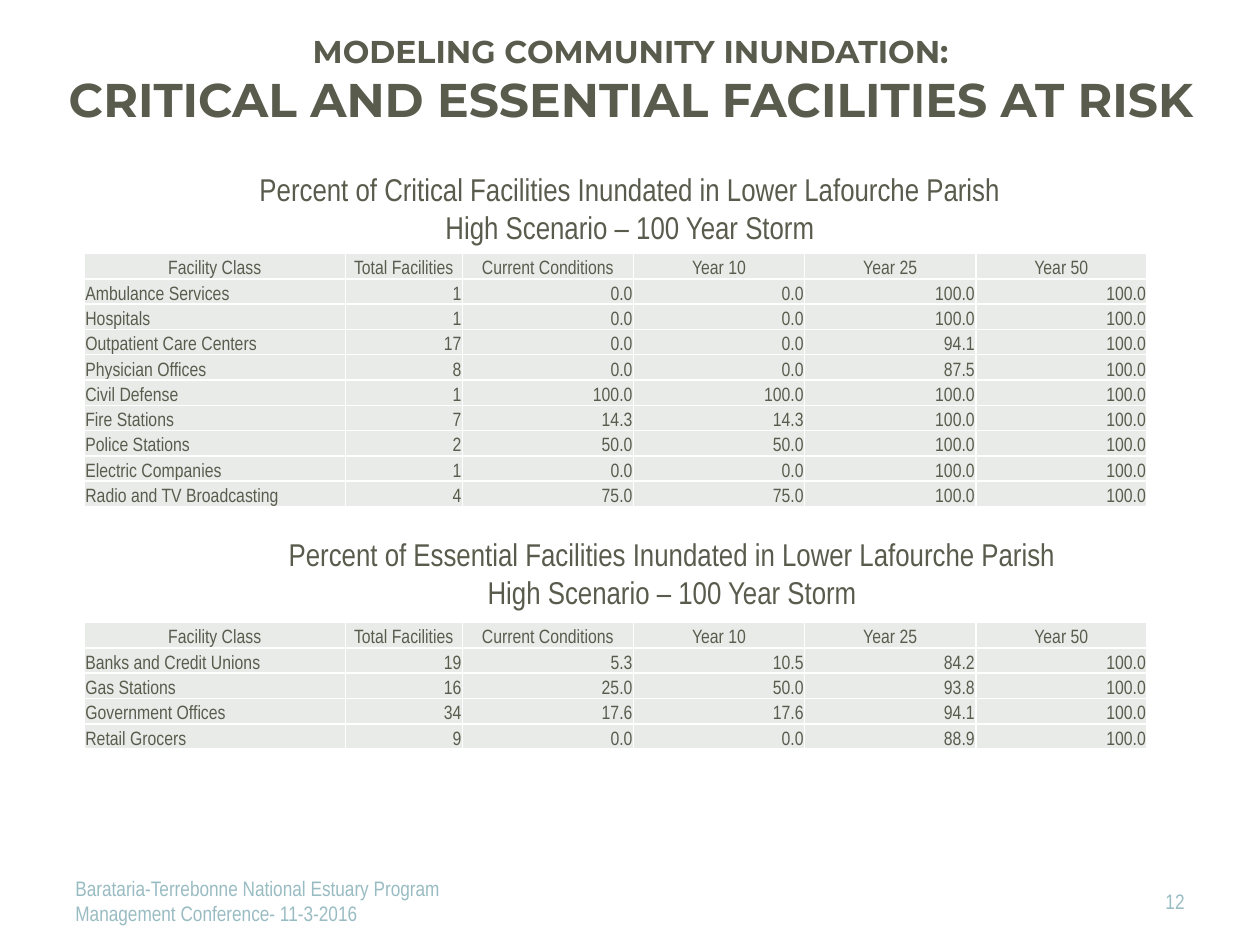
from lxml.etree import SubElement
from pptx import Presentation
from pptx.dml.color import RGBColor
from pptx.enum.text import MSO_ANCHOR as Anchor, PP_ALIGN as Align
from pptx.oxml.ns import qn
from pptx.util import Cm, Pt

COLORS = {"text": "595C4D", "footer": "99BCC3", "cell": "E9EBE9", "border": "FFFFFF"}
BODY_FONT, TITLE_FONT = "Arial Narrow", "Montserrat"
COLUMN_WIDTHS = [5.26, 2.36] + [3.45] * 4
ROW_HEIGHT = 0.51
HEADINGS = ("Facility Class", "Total Facilities", "Current Conditions",
            "Year 10", "Year 25", "Year 50")
CRITICAL = [
    ("Ambulance Services", 1, 0.0, 0.0, 100.0, 100.0),
    ("Hospitals", 1, 0.0, 0.0, 100.0, 100.0),
    ("Outpatient Care Centers", 17, 0.0, 0.0, 94.1, 100.0),
    ("Physician Offices", 8, 0.0, 0.0, 87.5, 100.0),
    ("Civil Defense", 1, 100.0, 100.0, 100.0, 100.0),
    ("Fire Stations", 7, 14.3, 14.3, 100.0, 100.0),
    ("Police Stations", 2, 50.0, 50.0, 100.0, 100.0),
    ("Electric Companies", 1, 0.0, 0.0, 100.0, 100.0),
    ("Radio and TV Broadcasting", 4, 75.0, 75.0, 100.0, 100.0),
]
ESSENTIAL = [
    ("Banks and Credit Unions", 19, 5.3, 10.5, 84.2, 100.0),
    ("Gas Stations", 16, 25.0, 50.0, 93.8, 100.0),
    ("Government Offices", 34, 17.6, 17.6, 94.1, 100.0),
    ("Retail Grocers", 9, 0.0, 0.0, 88.9, 100.0),
]


def add_run(paragraph, text, size, color="text", font=BODY_FONT, bold=False):
    """Append one styled run to a paragraph."""
    run = paragraph.add_run()
    run.text = text
    run.font.name, run.font.size, run.font.bold = font, Pt(size), bold
    run.font.color.rgb = RGBColor.from_string(COLORS[color])


def add_frame(slide, box, anchor=Anchor.MIDDLE):
    """Add a wrapping text box and return its text frame."""
    frame = slide.shapes.add_textbox(*map(Cm, box)).text_frame
    frame.word_wrap = True
    frame.vertical_anchor = anchor
    return frame


def add_title(slide, box):
    """Place the two-line slide title."""
    heading = add_frame(slide, box).paragraphs[0]
    heading.alignment = Align.CENTER
    add_run(heading, "MODELING COMMUNITY INUNDATION:", 18, font=TITLE_FONT, bold=True)
    heading.add_line_break()
    add_run(heading, "CRITICAL AND ESSENTIAL FACILITIES AT RISK", 27,
            font=TITLE_FONT, bold=True)


def add_caption(slide, box, facility_type):
    """Place the two-line caption above a table."""
    frame = add_frame(slide, box, Anchor.TOP)
    topic = frame.paragraphs[0]
    scenario = frame.add_paragraph()
    topic.alignment = scenario.alignment = Align.CENTER
    add_run(topic, f"Percent of {facility_type} Facilities Inundated in "
                   "Lower Lafourche Parish", 18)
    add_run(scenario, "High Scenario – 100 Year Storm", 18)


def fill_cell(cell, text, alignment):
    """Write, border and fill one table cell."""
    cell.margin_left = cell.margin_right = cell.margin_top = Cm(0.02)
    cell.margin_bottom = 0
    cell.vertical_anchor = Anchor.BOTTOM
    paragraph = cell.text_frame.paragraphs[0]
    paragraph.alignment = alignment
    add_run(paragraph, text, 11)
    properties = cell._tc.get_or_add_tcPr()
    for side in ("lnL", "lnR", "lnT", "lnB"):
        border = SubElement(properties, qn(f"a:{side}"), w=str(Pt(1)))
        paint = SubElement(border, qn("a:solidFill"))
        SubElement(paint, qn("a:srgbClr"), val=COLORS["border"])
    cell.fill.solid()
    cell.fill.fore_color.rgb = RGBColor.from_string(COLORS["cell"])


def add_facility_table(slide, left, top, facilities):
    """Place a table of inundation percentages by facility class."""
    rows = [HEADINGS, *facilities]
    table = slide.shapes.add_table(
        len(rows), len(HEADINGS), Cm(left), Cm(top),
        Cm(sum(COLUMN_WIDTHS)), Cm(ROW_HEIGHT * len(rows))).table
    table.first_row = table.horz_banding = False
    for column, width in zip(table.columns, COLUMN_WIDTHS):
        column.width = Cm(width)
    for r, values in enumerate(rows):
        table.rows[r].height = Cm(ROW_HEIGHT)
        for c, value in enumerate(values):
            body_alignment = Align.RIGHT if c else Align.LEFT
            fill_cell(table.cell(r, c), str(value),
                      body_alignment if r else Align.CENTER)


def add_footer(slide, box, text, alignment):
    """Place one footer text."""
    footer = add_frame(slide, box).paragraphs[0]
    footer.alignment = alignment
    add_run(footer, text, 12, "footer")


def main():
    """Build and save the slide."""
    deck = Presentation()
    deck.slide_width, deck.slide_height = Cm(25.4), Cm(19.05)
    slide = deck.slides.add_slide(deck.slide_layouts[6])
    add_footer(slide, (18.21, 17.65, 5.92, 1.02), "12", Align.RIGHT)
    add_footer(slide, (1.27, 17.65, 8.05, 1.02),
               "Barataria-Terrebonne National Estuary Program "
               "Management Conference- 11-3-2016", Align.LEFT)
    add_title(slide, (-0.38, 0, 26.19, 3.2))
    add_caption(slide, (1.7, 10.67, 23.7, 1.8), "Essential")
    add_facility_table(slide, 1.7, 12.55, ESSENTIAL)
    add_caption(slide, (0, 3.3, 25.4, 1.8), "Critical")
    add_facility_table(slide, 1.7, 5.11, CRITICAL)
    deck.save("out.pptx")


if __name__ == "__main__":
    main()
